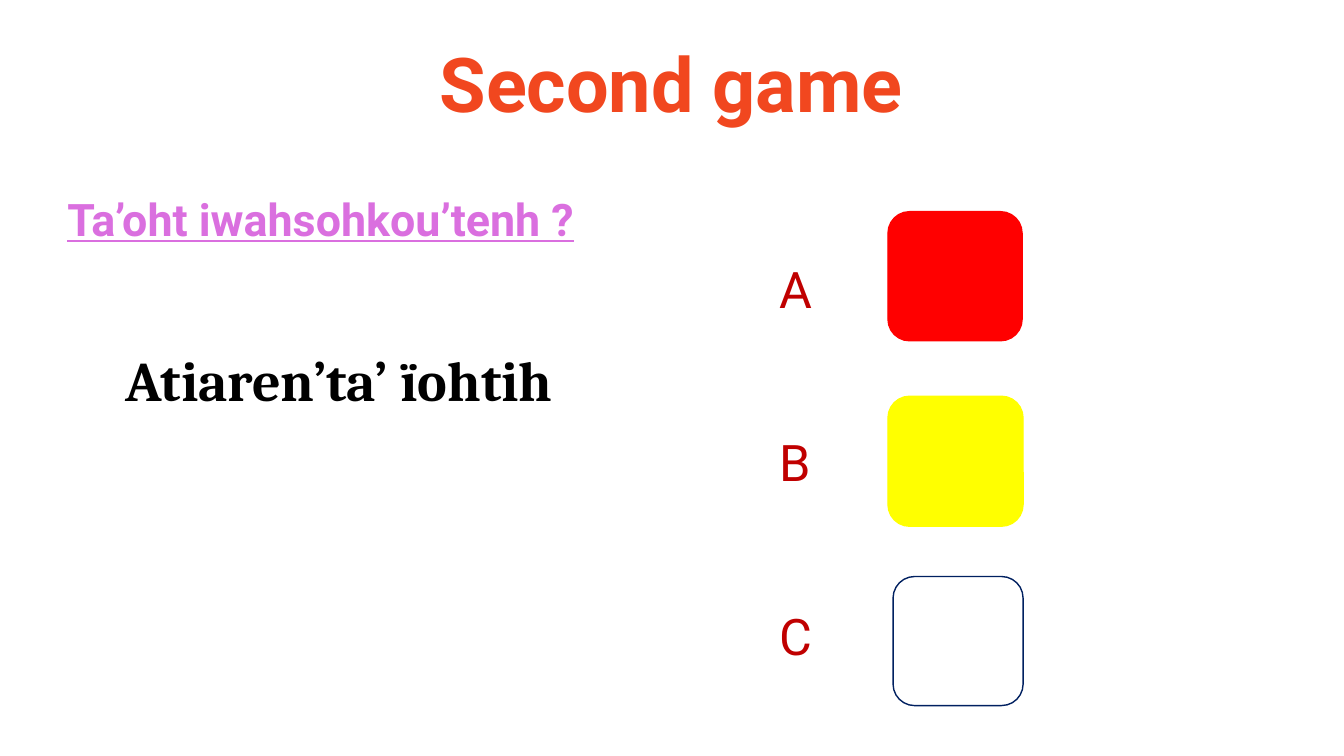
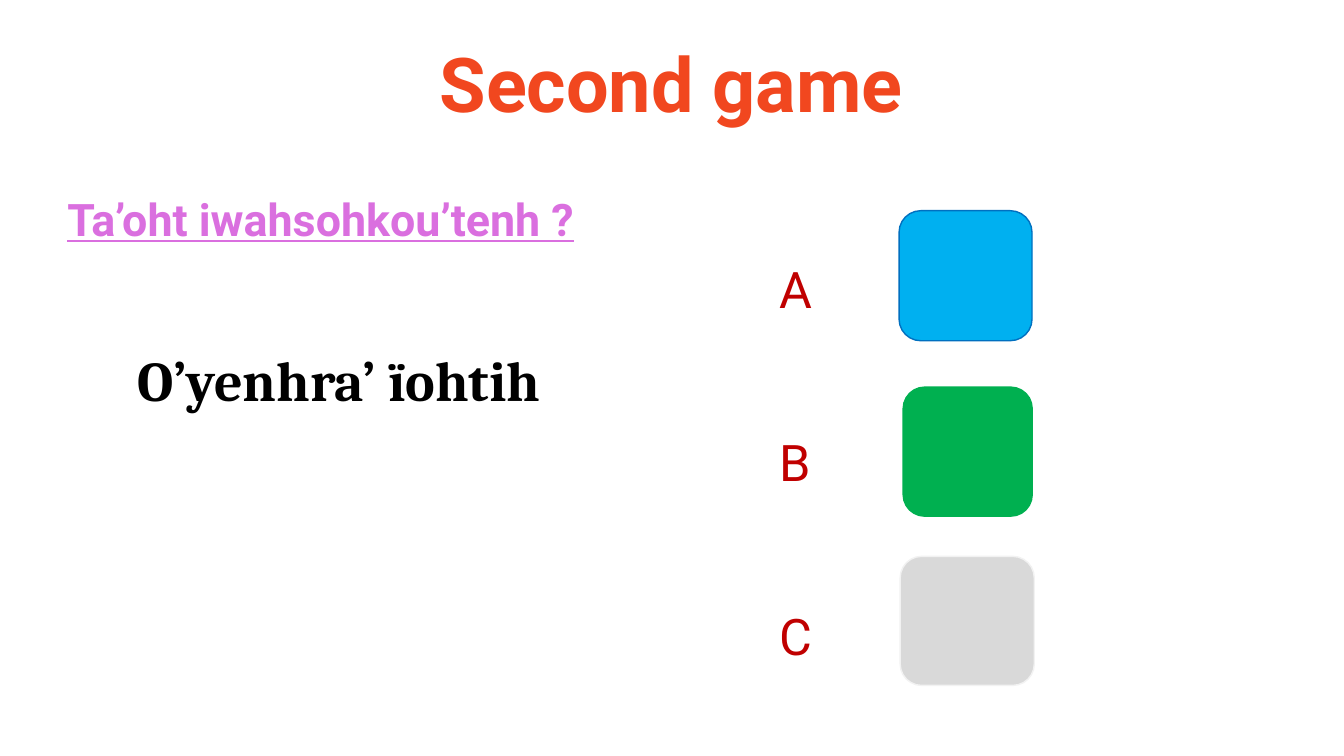
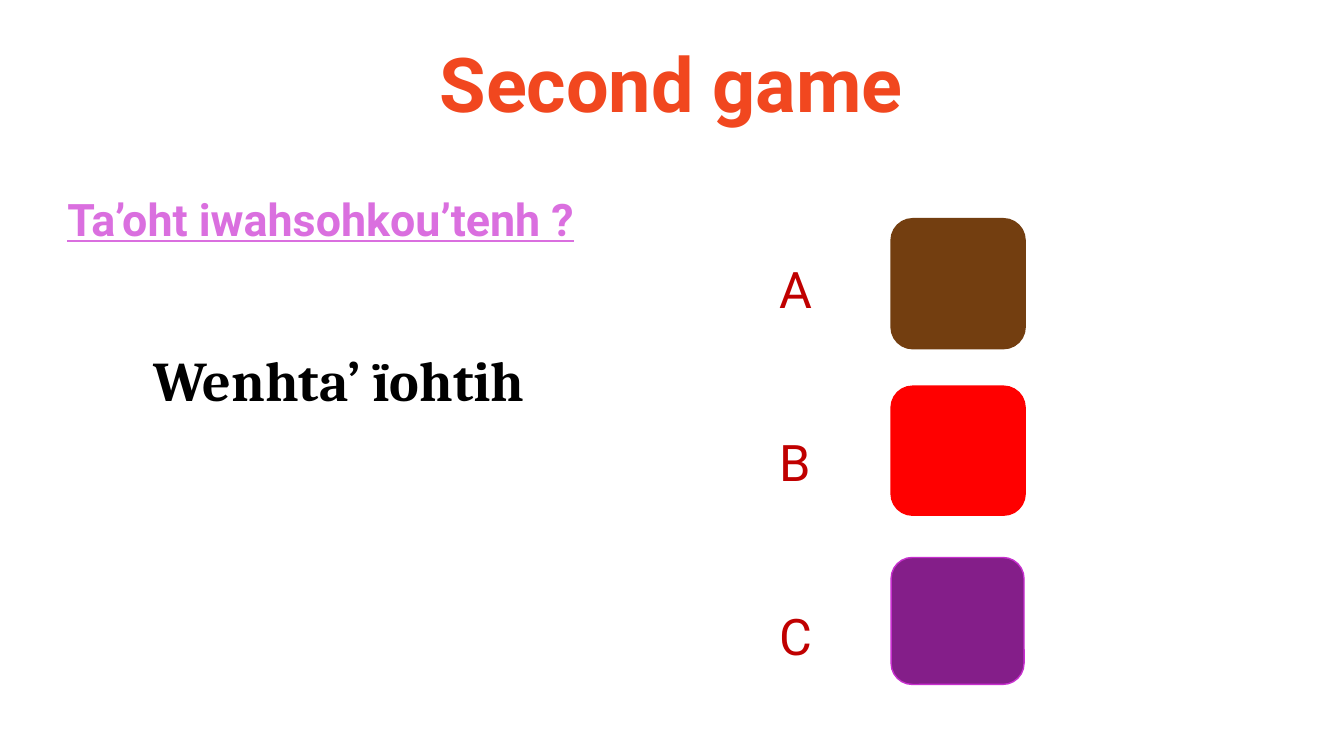
from lxml.etree import SubElement
from pptx import Presentation
from pptx.dml.color import RGBColor
from pptx.enum.shapes import MSO_SHAPE
from pptx.enum.text import MSO_ANCHOR, MSO_AUTO_SIZE, PP_ALIGN
from pptx.oxml.ns import qn
from pptx.util import Pt

ORANGE = RGBColor(0xF1, 0x47, 0x1F)
PINK = RGBColor(0xDA, 0x6F, 0xDF)
CRIMSON = RGBColor(0xC0, 0x00, 0x00)
BLACK = RGBColor(0x00, 0x00, 0x00)
WHITE = RGBColor(0xFF, 0xFF, 0xFF)
NAVY = RGBColor(0x00, 0x20, 0x60)
RED = RGBColor(0xFF, 0x00, 0x00)
YELLOW = RGBColor(0xFF, 0xFF, 0x00)
SKY = RGBColor(0x00, 0xB0, 0xF0)
BLUE = RGBColor(0x00, 0x70, 0xC0)
GREEN = RGBColor(0x00, 0xB0, 0x50)
GREY = RGBColor(0xD9, 0xD9, 0xD9)
PALE = RGBColor(0xF2, 0xF2, 0xF2)
BROWN = RGBColor(0x73, 0x3E, 0x10)
PURPLE = RGBColor(0x84, 0x1E, 0x89)
VIOLET = RGBColor(0xC6, 0x2E, 0xCD)

SANS, SERIF = "Roboto", "Cambria"
LETTER_GAP = 80.7

# Each round: the answer, then left, top, width, height, fill and line of A, B, C
ROUNDS = [
    ("Atiaren’ta’ ïohtih", [
        (634.3, 151.2, 95.8, 92.2, RED, RED),
        (634.3, 283, 96.5, 92.9, YELLOW, YELLOW),
        (637.9, 411.8, 92.9, 92.2, WHITE, NAVY)]),
    ("O’yenhra’ ïohtih", [
        (642.2, 150.5, 95, 92.9, SKY, BLUE),
        (645.1, 276.5, 92.2, 92.2, GREEN, GREEN),
        (643, 397.4, 95.8, 92.2, GREY, PALE)]),
    ("Wenhta’ ïohtih", [
        (636.5, 156.2, 95.8, 92.9, BROWN, BROWN),
        (636.5, 275.8, 95.8, 92.2, RED, RED),
        (636.5, 398.2, 95, 90.7, PURPLE, VIOLET)]),
]


def place(shape, left, top, width, height):
    shape.left, shape.top = Pt(left), Pt(top)
    shape.width, shape.height = Pt(width), Pt(height)


def style(par, name, size, color, bold=False, line=False):
    for run in par.runs:
        font = run.font
        font.name, font.size, font.bold = name, Pt(size), bold
        font.underline = line
        font.color.rgb = color


def add_title(slide, text):
    title = slide.shapes.title
    place(title, 83.5, 0, 792, 95.8)
    frame = title.text_frame
    frame.text = text
    frame.auto_size = MSO_AUTO_SIZE.NONE
    frame.vertical_anchor = MSO_ANCHOR.BOTTOM
    par = frame.paragraphs[0]
    par.alignment, par.line_spacing = PP_ALIGN.CENTER, 0.9
    style(par, SANS, 54, ORANGE, bold=True)


def add_text(slide, text, box):
    """Add a one-line text box and return its paragraph."""
    frame = slide.shapes.add_textbox(*map(Pt, box)).text_frame
    frame.word_wrap = True
    frame.text = text
    return frame.paragraphs[0]


def add_letters(slide, letters):
    """Set the choices as a list without bullets in the body placeholder."""
    body = slide.placeholders[1]
    place(body, 549.4, 180.7, 344.2, 359.3)
    frame = body.text_frame
    frame.text = "\n".join(letters)
    frame.auto_size = MSO_AUTO_SIZE.NONE
    for i, par in enumerate(frame.paragraphs):
        props = par._p.get_or_add_pPr()
        props.set("marL", "0")
        props.set("indent", "0")
        par.space_before = Pt(LETTER_GAP if i else 0)
        SubElement(props, qn("a:buNone"))
        style(par, SANS, 36, CRIMSON)


def add_card(slide, left, top, width, height, fill, line):
    card = slide.shapes.add_shape(MSO_SHAPE.ROUNDED_RECTANGLE,
                                  Pt(left), Pt(top), Pt(width), Pt(height))
    card.shadow.inherit = False
    card.fill.solid()
    card.fill.fore_color.rgb = fill
    card.line.color.rgb = line
    card.line.width = Pt(1)


def add_round(deck, answer, cards):
    slide = deck.slides.add_slide(deck.slide_layouts[1])
    add_title(slide, "Second game")
    ask = add_text(slide, "Ta’oht iwahsohkou’tenh ?", (41, 133.2, 517, 46.1))
    style(ask, SANS, 32, PINK, bold=True, line=True)
    reply = add_text(slide, answer, (34.6, 243.4, 414.7, 79.2))
    reply.alignment = PP_ALIGN.CENTER
    style(reply, SERIF, 40, BLACK, bold=True)
    add_letters(slide, "ABC")
    for card in cards:
        add_card(slide, *card)


def main():
    deck = Presentation()
    deck.slide_width, deck.slide_height = Pt(960), Pt(540)
    for answer, cards in ROUNDS:
        add_round(deck, answer, cards)
    deck.save("out.pptx")


if __name__ == "__main__":
    main()
